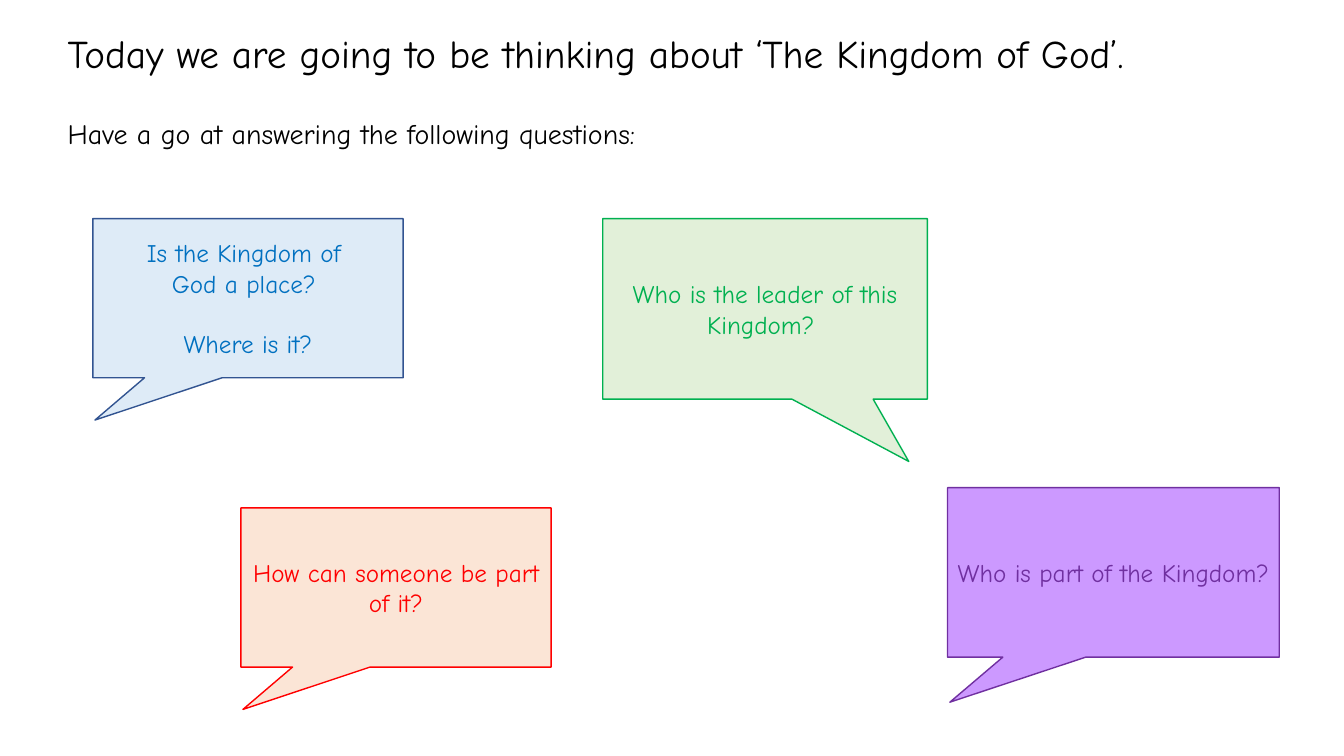
from dataclasses import dataclass

from pptx import Presentation
from pptx.dml.color import RGBColor
from pptx.enum.shapes import MSO_SHAPE as Shape
from pptx.enum.text import MSO_ANCHOR as Anchor, MSO_AUTO_SIZE as Fit, PP_ALIGN as Align
from pptx.slide import Slide
from pptx.text.text import TextFrame
from pptx.util import Cm, Pt

FONT = "Comic Neue"


@dataclass
class Bubble:
    left: float
    top: float
    width: float
    height: float
    fill: str
    line: str
    ink: str
    lines: list[str]
    tip: tuple[float, float] = (-0.493, 0.766)


BUBBLES = [
    Bubble(2.34, 5.51, 7.82, 4.01, "DEEBF7", "325491", "0070C0",
           ["Is the Kingdom of \nGod a place? ", "Where is it?"]),
    Bubble(15.19, 5.51, 8.18, 4.55, "E2F0D9", "00B050", "00B050",
           ["Who is the leader of this Kingdom? "], (0.443, 0.845)),
    Bubble(23.88, 12.29, 8.36, 4.27, "CC99FF", "7030A0", "7030A0",
           ["Who is part of the Kingdom?"]),
    Bubble(6.07, 12.8, 7.82, 4.01, "FBE5D6", "FF0000", "FF0000",
           ["How can someone be part of it?"]),
]


def tint(code: str) -> RGBColor:
    return RGBColor.from_string(code)


def write(frame: TextFrame, text: str, *, size: float, ink: str = "000000",
          align: Align = Align.LEFT, gap: float = 0, pitch: float = 1.0) -> None:
    """Fill the empty first paragraph, or add one below the others."""
    para = frame.add_paragraph() if frame.text else frame.paragraphs[0]
    para.text = text
    para.alignment = align
    para.space_before = Pt(gap)
    para.line_spacing = pitch
    for run in para.runs:
        run.font.name = FONT
        run.font.size = Pt(size)
        run.font.color.rgb = tint(ink)


def add_title(slide: Slide) -> None:
    title = slide.shapes.title
    title.left, title.top = Cm(1.45), Cm(0.43)
    title.width, title.height = Cm(29.21), Cm(5.23)
    frame = title.text_frame
    frame.auto_size = Fit.NONE
    frame.vertical_anchor = Anchor.TOP
    frame.margin_top = Cm(0.45)
    write(frame, "Today we are going to be thinking about ‘The Kingdom of God’.",
          size=28, pitch=0.9)
    write(frame, "Have a go at answering the following questions:",
          size=20, pitch=0.9, gap=31)


def add_bubble(slide: Slide, item: Bubble) -> None:
    shape = slide.shapes.add_shape(
        Shape.RECTANGULAR_CALLOUT,
        Cm(item.left), Cm(item.top), Cm(item.width), Cm(item.height))
    shape.adjustments[0], shape.adjustments[1] = item.tip
    shape.shadow.inherit = False
    shape.fill.solid()
    shape.fill.fore_color.rgb = tint(item.fill)
    shape.line.color.rgb = tint(item.line)
    shape.line.width = Pt(1)
    frame = shape.text_frame
    frame.word_wrap = True
    frame.vertical_anchor = Anchor.MIDDLE
    for row, text in enumerate(item.lines):
        write(frame, text, size=18, ink=item.ink, align=Align.CENTER,
              gap=21.5 if row else 0)


def main() -> None:
    deck = Presentation()
    deck.slide_width, deck.slide_height = Cm(33.87), Cm(19.05)
    slide = deck.slides.add_slide(deck.slide_layouts.get_by_name("Title Only"))

    # Heading and instruction
    add_title(slide)

    # Question bubbles
    for item in BUBBLES:
        add_bubble(slide, item)

    deck.save("out.pptx")


if __name__ == "__main__":
    main()
